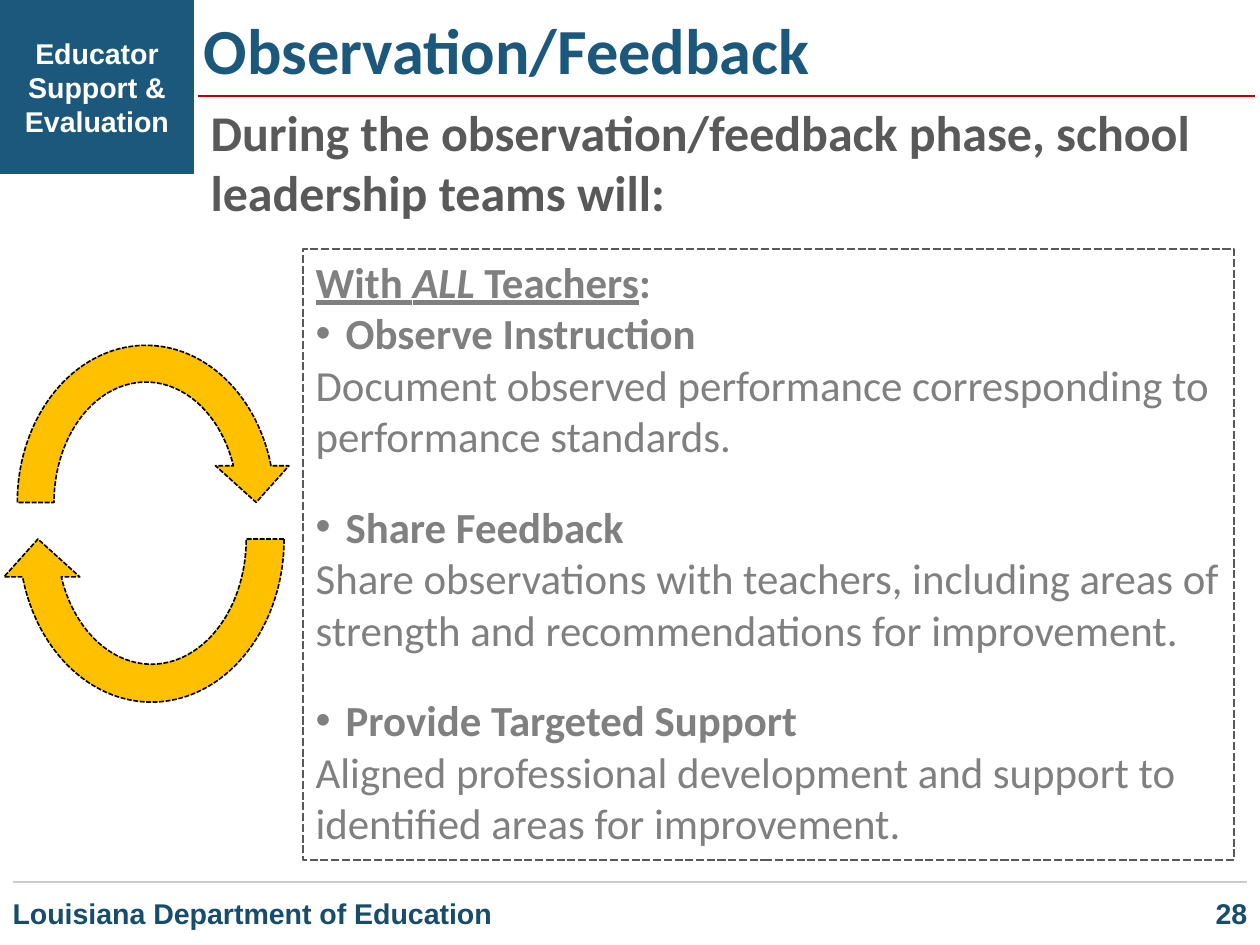
"""Builds the Observation/Feedback slide of the educator support deck."""
from lxml import etree
from pptx import Presentation
from pptx import util as u
from pptx.dml.color import RGBColor
from pptx.enum import dml, shapes, text
from pptx.oxml.ns import qn

PX = 7112
SLIDE = (1260, 945)
COLORS = {"navy": "1B587C", "footer": "164C6C", "white": "FFFFFF", "heading": "595959",
          "body": "808080", "arrow": "FFC000", "black": "000000", "red": "C00000",
          "rule": "CCCCCC"}

TITLE = "Observation/Feedback"
BADGE = "Educator Support & Evaluation"
LEAD = "During the observation/feedback phase, school leadership teams will:"
AUDIENCE = [("With ", True, False), ("ALL", True, True), (" Teachers", True, False),
            (":", False, False)]
STEPS = [
    ("Observe Instruction",
     "Document observed performance corresponding to performance standards."),
    ("Share Feedback",
     "Share observations with teachers, including areas of strength and "
     "recommendations for improvement."),
    ("Provide Targeted Support",
     "Aligned professional development and support to identified areas for improvement."),
]
CYCLE = [((-1, 327, 294, 351), 0), ((0, 357, 303, 364), 180)]
RULES = [((198, 96, 1255, 96), "red", 1.5), ((13, 882, 1247, 882), "rule", 0.75)]
FOOTER = [("Louisiana Department of Education", (0, 882, 612, 63), text.PP_ALIGN.LEFT),
          ("28", (908, 882, 352, 63), text.PP_ALIGN.RIGHT)]
BULLET_INDENT = 30
STEP_GAP = 22


def px(*values):
    return [u.Emu(value * PX) for value in values]


def rgb(name):
    return RGBColor.from_string(COLORS[name])


def style(run, size, color, font="Calibri", bold=True):
    run.font.name, run.font.size, run.font.bold = font, u.Pt(size), bold
    run.font.color.rgb = rgb(color)


def write(shape, words, size, color, font="Calibri", align=text.PP_ALIGN.LEFT,
          anchor=text.MSO_ANCHOR.TOP):
    frame = shape.text_frame
    frame.text = words
    frame.word_wrap = True
    frame.auto_size = text.MSO_AUTO_SIZE.NONE
    frame.vertical_anchor = anchor
    frame.paragraphs[0].alignment = align
    style(frame.paragraphs[0].runs[0], size, color, font)


def add_box(slide, kind, box, fill=None, line=None, width=1.0):
    shape = slide.shapes.add_shape(kind, *px(*box))
    shape.shadow.inherit = False
    if fill:
        shape.fill.solid()
        shape.fill.fore_color.rgb = rgb(fill)
    else:
        shape.fill.background()
    if line:
        shape.line.color.rgb = rgb(line)
        shape.line.width = u.Pt(width)
        shape.line.dash_style = dml.MSO_LINE.SQUARE_DOT
    else:
        shape.line.fill.background()
    return shape


def add_rule(slide, ends, color, width):
    rule = slide.shapes.add_connector(shapes.MSO_CONNECTOR.STRAIGHT, *px(*ends))
    rule.line.color.rgb = rgb(color)
    rule.line.width = u.Pt(width)
    etree.SubElement(rule._element.spPr, qn("a:effectLst"))


def add_bullet(paragraph):
    properties = paragraph._p.get_or_add_pPr()
    properties.set("marL", str(BULLET_INDENT * PX))
    properties.set("indent", str(-BULLET_INDENT * PX))
    etree.SubElement(properties, qn("a:buFont"), typeface="Arial")
    etree.SubElement(properties, qn("a:buChar"), char="•")


def fill_panel(panel):
    frame = panel.text_frame
    frame.word_wrap = True
    frame.vertical_anchor = text.MSO_ANCHOR.TOP
    frame.margin_right = u.Emu(8 * PX)
    audience = frame.paragraphs[0]
    audience.alignment = text.PP_ALIGN.LEFT
    for words, underlined, italic in AUDIENCE:
        run = audience.add_run()
        run.text = words
        style(run, 24, "body")
        run.font.underline, run.font.italic = underlined, italic
    for number, step in enumerate(STEPS):
        for words, is_heading in zip(step, (True, False)):
            paragraph = frame.add_paragraph()
            paragraph.text = words
            paragraph.alignment = text.PP_ALIGN.LEFT
            style(paragraph.runs[0], 24, "body", bold=is_heading)
            if is_heading:
                paragraph.space_before = u.Pt(STEP_GAP if number else 0)
                add_bullet(paragraph)


def main():
    deck = Presentation()
    deck.slide_width, deck.slide_height = px(*SLIDE)
    slide = deck.slides.add_slide(deck.slide_layouts[5])

    title = slide.shapes.title
    title.left, title.top, title.width, title.height = px(191, 4, 1069, 121)
    write(title, TITLE, 36, "navy")

    badge = add_box(slide, shapes.MSO_SHAPE.RECTANGLE, (0, 0, 194, 174), "navy")
    write(badge, BADGE, 16, "white", "Arial", text.PP_ALIGN.CENTER, text.MSO_ANCHOR.MIDDLE)

    lead = slide.shapes.add_textbox(*px(198, 95, 1062, 134))
    write(lead, LEAD, 28, "heading")

    for box, rotation in CYCLE:
        arrow = add_box(slide, shapes.MSO_SHAPE.CIRCULAR_ARROW, box, "arrow", "black", 0.9)
        arrow.rotation = rotation

    fill_panel(add_box(slide, shapes.MSO_SHAPE.RECTANGLE, (303, 249, 931, 611),
                       line="heading", width=1.5))

    for ends, color, width in RULES:
        add_rule(slide, ends, color, width)

    for words, box, align in FOOTER:
        note = slide.shapes.add_textbox(*px(*box))
        write(note, words, 16, "footer", "Arial", align, text.MSO_ANCHOR.MIDDLE)

    deck.save("out.pptx")


if __name__ == "__main__":
    main()
